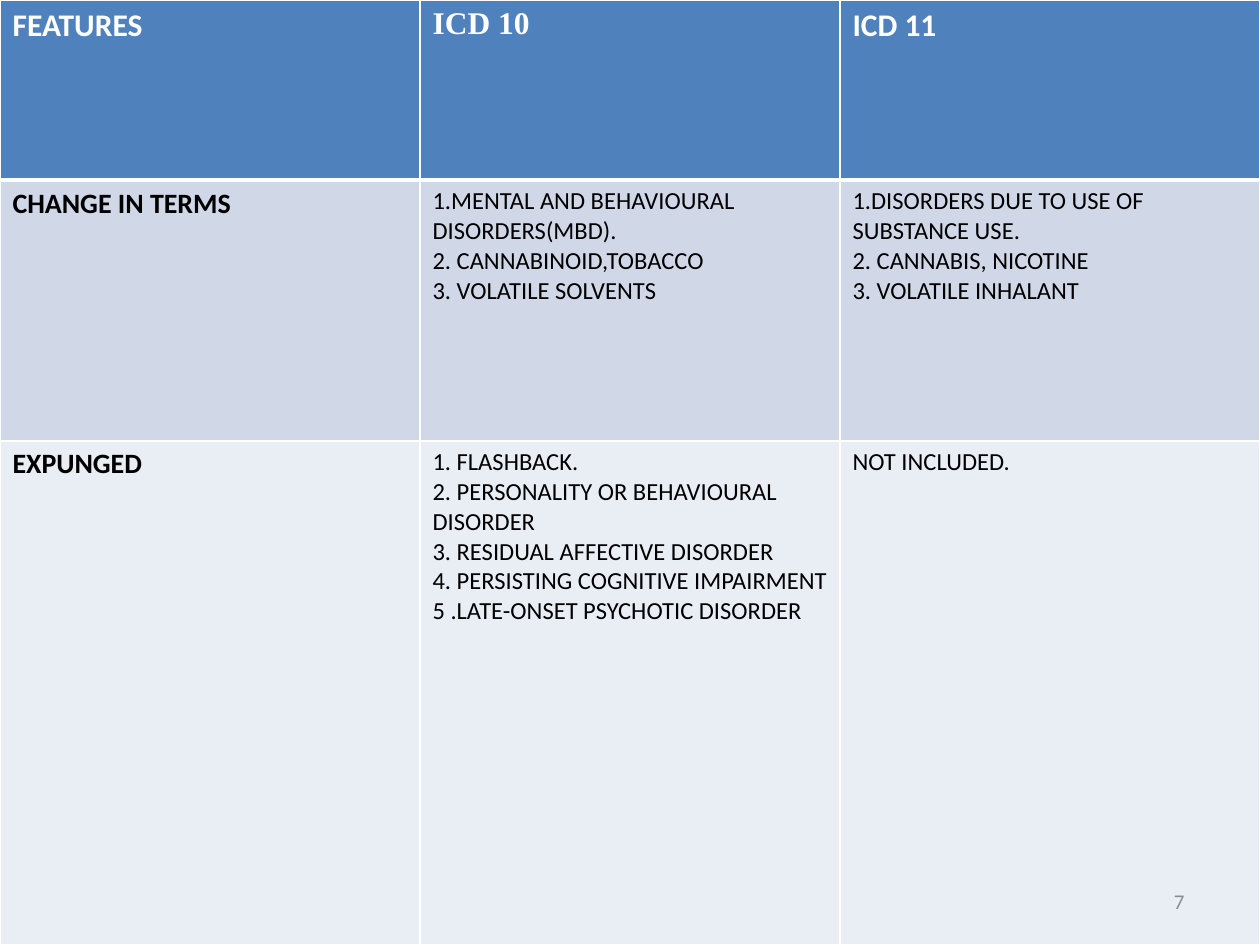
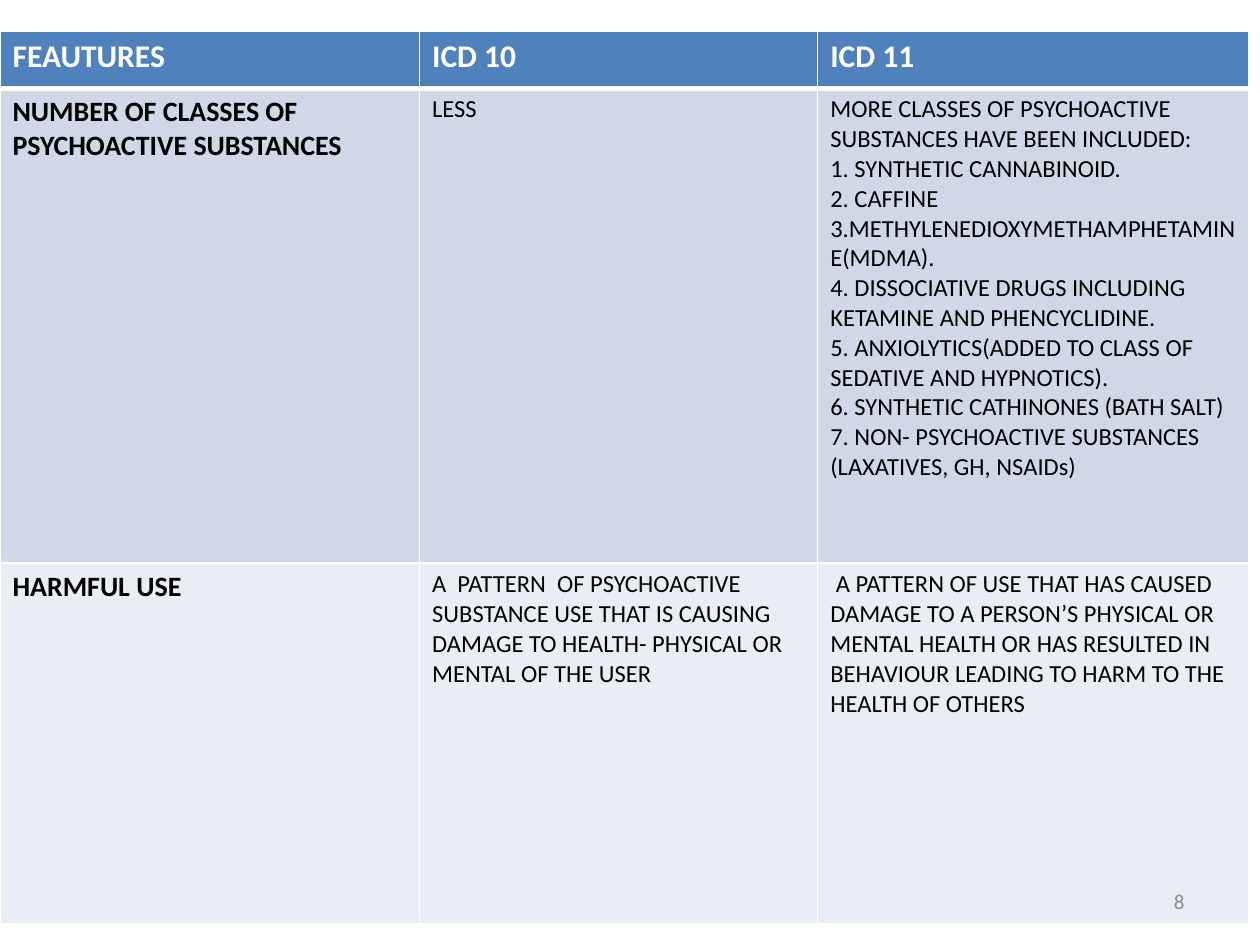
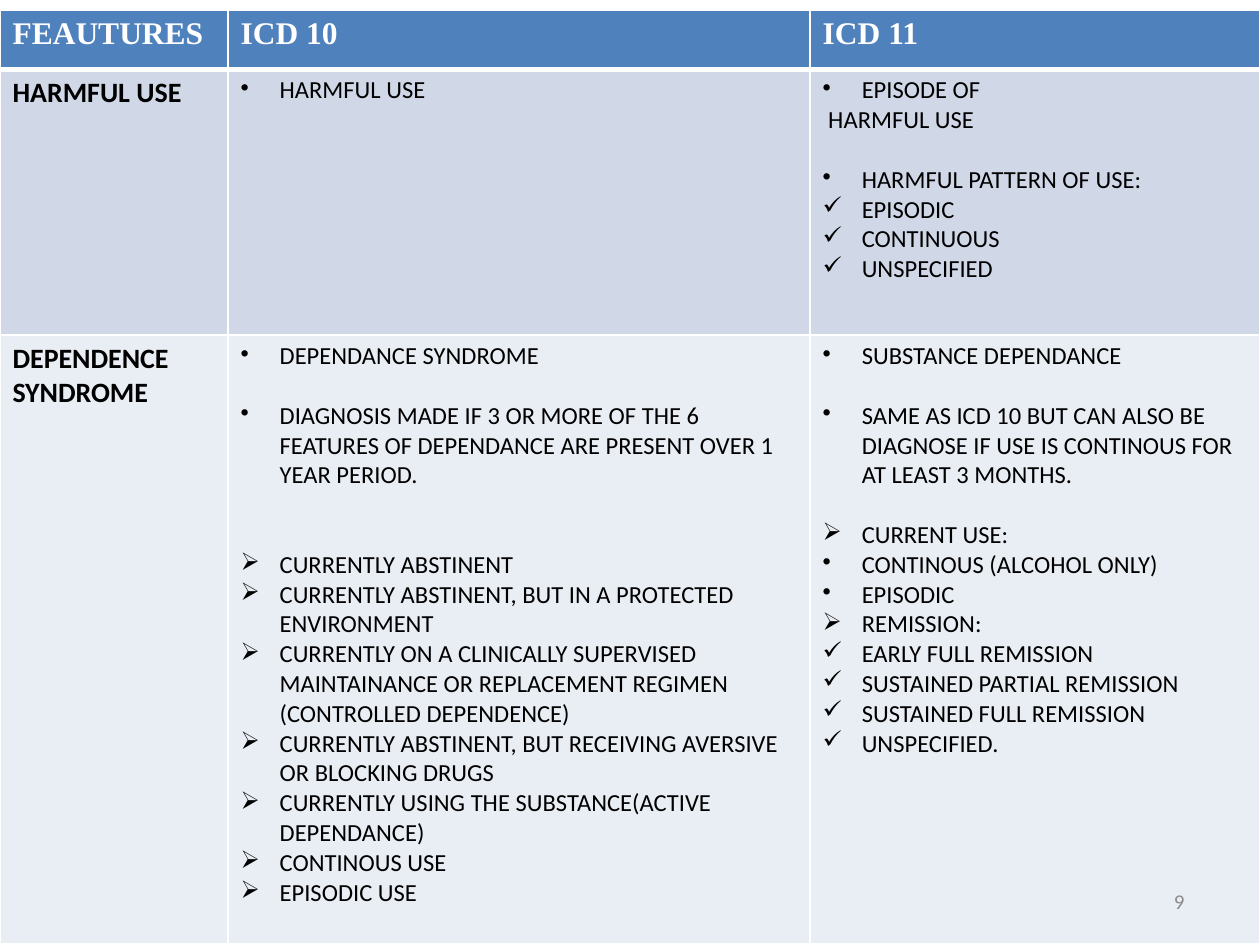
import dataclasses
import functools
import lxml.etree
import pptx
import pptx.dml.color
import pptx.enum.text
import pptx.oxml.ns
import pptx.presentation
import pptx.slide
import pptx.util

COLS, ROWS = 10, 7.5


@dataclasses.dataclass(frozen=True)
class Theme:
    head: str = "4F81BD"
    bands: tuple[str, str] = ("D0D8E8", "E9EDF4")
    rule: str = "FFFFFF"
    light: str = "FFFFFF"
    dark: str = "000000"
    grey: str = "8C8C8C"
    sans: str = "Calibri"
    serif: str = "Times New Roman"
    top: int = 18
    label: int = 16
    body: int = 14
    foot: int = 12
    thin: int = 1
    thick: int = 3
    indent: float = 0.31
    gap: int = 17


THEME = Theme()


@dataclasses.dataclass(frozen=True)
class Style:
    size: int
    colour: str
    bold: bool = False
    face: str = THEME.sans


@dataclasses.dataclass(frozen=True)
class Line:
    text: str
    mark: str = ""
    gap: int = 0


@dataclasses.dataclass(frozen=True)
class Band:
    label: str
    old: list[Line]
    new: list[Line]


@dataclasses.dataclass(frozen=True)
class Chart:
    number: int
    top: float
    cols: tuple[float, ...]
    rows: tuple[float, ...]
    heads: tuple[str, ...]
    faces: tuple[str, ...]
    bands: list[Band]


HEAD = Style(THEME.top, THEME.light, True)
LABEL = Style(THEME.label, THEME.dark, True)
BODY = Style(THEME.body, THEME.dark)
FOOT = Style(THEME.foot, THEME.grey)

dot = functools.partial(Line, mark="•")
tick = functools.partial(Line, mark="✓")
dart = functools.partial(Line, mark="➢")

CHARTS = [
    Chart(
        7, 0, (COLS / 3,) * 3, (1.43, 2.07, 4),
        ("FEATURES", "ICD 10", "ICD 11"),
        (THEME.sans, THEME.serif, THEME.sans),
        [
            Band("CHANGE IN TERMS", [
                Line("1.MENTAL AND BEHAVIOURAL DISORDERS(MBD)."),
                Line("2. CANNABINOID,TOBACCO"),
                Line("3. VOLATILE SOLVENTS"),
            ], [
                Line("1.DISORDERS DUE TO USE OF SUBSTANCE USE."),
                Line("2. CANNABIS, NICOTINE"),
                Line("3. VOLATILE INHALANT"),
            ]),
            Band("EXPUNGED", [
                Line("1. FLASHBACK."),
                Line("2. PERSONALITY OR BEHAVIOURAL DISORDER"),
                Line("3. RESIDUAL AFFECTIVE DISORDER"),
                Line("4. PERSISTING COGNITIVE IMPAIRMENT"),
                Line("5 .LATE-ONSET PSYCHOTIC DISORDER"),
            ], [Line("NOT INCLUDED.")]),
        ],
    ),
    Chart(
        8, 0.25, (3.33, 3.16, 3.42), (0.45, 3.77, 2.86),
        ("FEAUTURES", "ICD 10", "ICD 11"),
        (THEME.sans,) * 3,
        [
            Band("NUMBER OF CLASSES OF PSYCHOACTIVE SUBSTANCES", [Line("LESS")], [
                Line("MORE CLASSES OF PSYCHOACTIVE SUBSTANCES HAVE BEEN INCLUDED:"),
                Line("1. SYNTHETIC CANNABINOID."),
                Line("2. CAFFINE 3.METHYLENEDIOXYMETHAMPHETAMINE(MDMA)."),
                Line("4. DISSOCIATIVE DRUGS INCLUDING KETAMINE AND PHENCYCLIDINE."),
                Line("5. ANXIOLYTICS(ADDED TO CLASS OF SEDATIVE AND HYPNOTICS)."),
                Line("6. SYNTHETIC CATHINONES (BATH SALT)"),
                Line("7. NON- PSYCHOACTIVE SUBSTANCES (LAXATIVES, GH, NSAIDs)"),
            ]),
            Band("HARMFUL USE", [
                Line("A  PATTERN  OF PSYCHOACTIVE SUBSTANCE USE THAT IS CAUSING "
                     "DAMAGE TO HEALTH- PHYSICAL OR MENTAL OF THE USER"),
            ], [
                Line(" A PATTERN OF USE THAT HAS CAUSED DAMAGE TO A PERSON’S PHYSICAL "
                     "OR MENTAL HEALTH OR HAS RESULTED IN BEHAVIOUR LEADING TO HARM "
                     "TO THE HEALTH OF OTHERS"),
            ]),
        ],
    ),
    Chart(
        9, 0.08, (1.81, 4.62, 3.57), (0.47, 2.11, 4.83),
        ("FEAUTURES", "ICD 10", "ICD 11"),
        (THEME.serif,) * 3,
        [
            Band("HARMFUL USE", [dot("HARMFUL USE")], [
                dot("EPISODE OF"),
                Line(" HARMFUL USE"),
                dot("HARMFUL PATTERN OF USE:", gap=1),
                tick("EPISODIC"),
                tick("CONTINUOUS"),
                tick("UNSPECIFIED"),
            ]),
            Band("DEPENDENCE SYNDROME", [
                dot("DEPENDANCE SYNDROME"),
                dot("DIAGNOSIS MADE IF 3 OR MORE OF THE 6 FEATURES OF DEPENDANCE "
                    "ARE PRESENT OVER 1 YEAR PERIOD.", gap=1),
                dart("CURRENTLY ABSTINENT", gap=2),
                dart("CURRENTLY ABSTINENT, BUT IN A PROTECTED ENVIRONMENT"),
                dart("CURRENTLY ON A CLINICALLY SUPERVISED MAINTAINANCE OR "
                     "REPLACEMENT REGIMEN (CONTROLLED DEPENDENCE)"),
                dart("CURRENTLY ABSTINENT, BUT RECEIVING AVERSIVE OR BLOCKING DRUGS"),
                dart("CURRENTLY USING THE SUBSTANCE(ACTIVE DEPENDANCE)"),
                dart("CONTINOUS USE"),
                dart("EPISODIC USE"),
            ], [
                dot("SUBSTANCE DEPENDANCE"),
                dot("SAME AS ICD 10 BUT CAN ALSO BE DIAGNOSE IF USE IS CONTINOUS "
                    "FOR AT LEAST 3 MONTHS.", gap=1),
                dart("CURRENT USE:", gap=1),
                dot("CONTINOUS (ALCOHOL ONLY)"),
                dot("EPISODIC"),
                dart("REMISSION:"),
                tick("EARLY FULL REMISSION"),
                tick("SUSTAINED PARTIAL REMISSION"),
                tick("SUSTAINED FULL REMISSION"),
                tick("UNSPECIFIED."),
            ]),
        ],
    ),
]


def span(units: float) -> pptx.util.Emu:
    return pptx.util.Inches(units)


def add_node(parent, tag: str, **attrs):
    return lxml.etree.SubElement(parent, pptx.oxml.ns.qn(tag), attrs)


def add_mark(para, mark: str) -> None:
    props = para._p.get_or_add_pPr()
    indent = span(THEME.indent)
    props.set("marL", str(indent))
    props.set("indent", str(-indent))
    add_node(props, "a:buChar", char=mark)


def write(frame, lines: list[Line], style: Style) -> None:
    for index, line in enumerate(lines):
        para = frame.add_paragraph() if index else frame.paragraphs[0]
        if line.gap:
            para.space_before = pptx.util.Pt(line.gap * THEME.gap)
        if line.mark:
            add_mark(para, line.mark)
        run = para.add_run()
        run.text = line.text
        run.font.size = pptx.util.Pt(style.size)
        run.font.bold = style.bold
        run.font.name = style.face
        run.font.color.rgb = pptx.dml.color.RGBColor.from_string(style.colour)


def paint(cell, fill: str, row: int) -> None:
    props = cell._tc.get_or_add_tcPr()
    thick_side = {0: "B", 1: "T"}.get(row)
    for side in "LRTB":
        width = THEME.thick if side == thick_side else THEME.thin
        edge = add_node(props, f"a:ln{side}", w=str(pptx.util.Pt(width)))
        add_node(add_node(edge, "a:solidFill"), "a:srgbClr", val=THEME.rule)
    cell.fill.solid()
    cell.fill.fore_color.rgb = pptx.dml.color.RGBColor.from_string(fill)


def draw_table(slide: pptx.slide.Slide, chart: Chart) -> None:
    table = slide.shapes.add_table(
        len(chart.rows), len(chart.cols), 0, span(chart.top),
        span(sum(chart.cols)), span(sum(chart.rows))).table
    for col, width in zip(table.columns, chart.cols):
        col.width = span(width)
    for row, height in zip(table.rows, chart.rows):
        row.height = span(height)
    for col, (text, face) in enumerate(zip(chart.heads, chart.faces)):
        cell = table.cell(0, col)
        paint(cell, THEME.head, 0)
        write(cell.text_frame, [Line(text)], dataclasses.replace(HEAD, face=face))
    for row, (band, fill) in enumerate(zip(chart.bands, THEME.bands), 1):
        parts = (([Line(band.label)], LABEL), (band.old, BODY), (band.new, BODY))
        for col, (lines, style) in enumerate(parts):
            cell = table.cell(row, col)
            paint(cell, fill, row)
            write(cell.text_frame, lines, style)


def draw_number(slide: pptx.slide.Slide, number: int) -> None:
    frame = slide.shapes.add_textbox(
        span(7.17), span(6.95), span(2.33), span(0.4)).text_frame
    frame.word_wrap = True
    frame.vertical_anchor = pptx.enum.text.MSO_ANCHOR.MIDDLE
    write(frame, [Line(str(number))], FOOT)
    frame.paragraphs[0].alignment = pptx.enum.text.PP_ALIGN.RIGHT


def main() -> None:
    deck = pptx.Presentation()
    deck.slide_width, deck.slide_height = span(COLS), span(ROWS)
    for chart in CHARTS:
        slide = deck.slides.add_slide(deck.slide_layouts.get_by_name("Blank"))
        draw_table(slide, chart)
        draw_number(slide, chart.number)
    deck.save("out.pptx")


if __name__ == "__main__":
    main()
